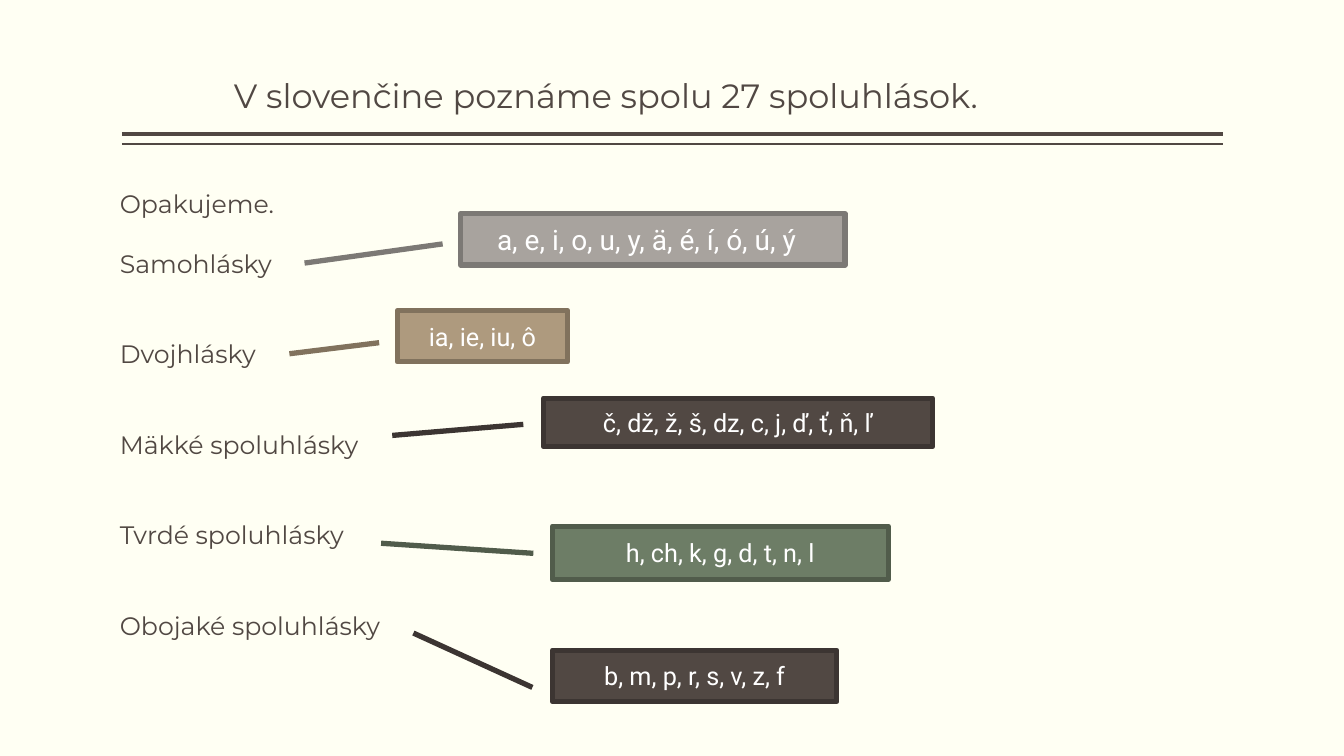
from lxml import etree
from pptx import Presentation
from pptx.dml.color import RGBColor
from pptx.enum.shapes import MSO_CONNECTOR, MSO_SHAPE
from pptx.enum.text import MSO_ANCHOR, PP_ALIGN
from pptx.oxml.ns import qn
from pptx.util import Inches, Pt

STRAIGHT = MSO_CONNECTOR.STRAIGHT
CALLOUT = MSO_SHAPE.LINE_CALLOUT_1
TOP, MIDDLE, BOTTOM = MSO_ANCHOR.TOP, MSO_ANCHOR.MIDDLE, MSO_ANCHOR.BOTTOM
LEFT, CENTER = PP_ALIGN.LEFT, PP_ALIGN.CENTER

THEME = {
    "background": "FFFFF3", "ink": "514843", "white": "FFFFFF",
    "gray": ("A8A39E", "7C7975"),
    "tan": ("AE9A7E", "81725D"),
    "brown": ("514843", "3C3532"),
    "green": ("6D7D66", "515C4B"),
    "heading_font": "Montserrat", "letter_font": "Roboto",
    "title_size": 24, "body_size": 18, "vowel_size": 20,
    "callout_line": 3.78,
}

TITLE = "V slovenčine poznáme spolu 27 spoluhlások."
GROUPS = [
    ("Opakujeme.", 0),
    ("Samohlásky", 21),
    ("Dvojhlásky", 43),
    ("Mäkké spoluhlásky", 43),
    ("Tvrdé spoluhlásky", 43),
    ("Obojaké spoluhlásky", 43),
]
RULES = [(1.33, 3), (1.43, 1)]
RULE_LEFT, RULE_RIGHT = 1.21, 12.13

CALLOUTS = [
    ("a, e, i, o, u, y, ä, é, í, ó, ú, ý", "gray", "vowel_size", 0.22,
     (4.57, 2.12, 3.81, 0.51), (4.39, 2.42), (3.02, 2.61)),
    ("ia, ie, iu, ô", "tan", "body_size", 0.1,
     (3.94, 3.08, 1.69, 0.51), (3.76, 3.4), (2.87, 3.51)),
    ("č, dž, ž, š, dz, c, j, ď, ť, ň, ľ", "brown", "body_size", 0.1,
     (5.39, 3.95, 3.86, 0.48), (5.19, 4.21), (3.89, 4.32)),
    ("h, ch, k, g, d, t, n, l", "green", "body_size", 0.1,
     (5.48, 5.22, 3.33, 0.53), (5.29, 5.49), (3.78, 5.39)),
    ("b, m, p, r, s, v, z, f", "brown", "body_size", 0.1,
     (5.48, 6.45, 2.82, 0.51), (5.28, 6.82), (4.1, 6.28)),
]


def color(value):
    return RGBColor.from_string(value)


def write_text(shape, lines, font="heading_font", size="body_size", ink="ink",
               align=LEFT, anchor=TOP, spacing=None, left=0.1, right=0.1):
    frame = shape.text_frame
    frame.word_wrap = True
    frame.vertical_anchor = anchor
    frame.margin_left, frame.margin_right = Inches(left), Inches(right)
    for index, (text, gap) in enumerate(lines):
        paragraph = frame.paragraphs[0] if index == 0 else frame.add_paragraph()
        paragraph.alignment = align
        paragraph.space_before = Pt(gap)
        if spacing:
            paragraph.line_spacing = spacing
        run = paragraph.add_run()
        run.text = text
        run.font.name = THEME[font]
        run.font.size = Pt(THEME[size])
        run.font.color.rgb = color(THEME[ink])


def add_rule(slide, y, width):
    rule = slide.shapes.add_connector(
        STRAIGHT, Inches(RULE_LEFT), Inches(y), Inches(RULE_RIGHT), Inches(y))
    rule.line.color.rgb = color(THEME["ink"])
    rule.line.width = Pt(width)
    etree.SubElement(rule.element.spPr, qn("a:effectLst"))


def add_callout(slide, text, palette, size, right, box, start, end):
    left, top, width, height = box
    shape = slide.shapes.add_shape(CALLOUT, *map(Inches, box))
    pointer = []
    for x, y in (start, end):
        pointer += [(y - top) / height, (x - left) / width]
    for index, value in enumerate(pointer):
        shape.adjustments[index] = value
    fill, line = THEME[palette]
    shape.shadow.inherit = False
    shape.fill.solid()
    shape.fill.fore_color.rgb = color(fill)
    shape.line.color.rgb = color(line)
    shape.line.width = Pt(THEME["callout_line"])
    write_text(shape, [(text, 0)], font="letter_font", size=size, ink="white",
               align=CENTER, anchor=MIDDLE, right=right)


def main():
    presentation = Presentation()
    presentation.slide_width, presentation.slide_height = Inches(13.33), Inches(7.5)
    slide = presentation.slides.add_slide(presentation.slide_layouts[6])
    slide.background.fill.solid()
    slide.background.fill.fore_color.rgb = color(THEME["background"])

    for y, width in RULES:
        add_rule(slide, y, width)

    title = slide.shapes.add_textbox(Inches(2.32), Inches(0), Inches(8.9), Inches(1.2))
    write_text(title, [(TITLE, 0)], size="title_size", anchor=BOTTOM,
               spacing=0.9, left=0, right=0)
    groups = slide.shapes.add_textbox(Inches(1.09), Inches(1.82), Inches(10.53), Inches(5.6))
    write_text(groups, GROUPS)

    for callout in CALLOUTS:
        add_callout(slide, *callout)
    presentation.save("out.pptx")


if __name__ == "__main__":
    main()
